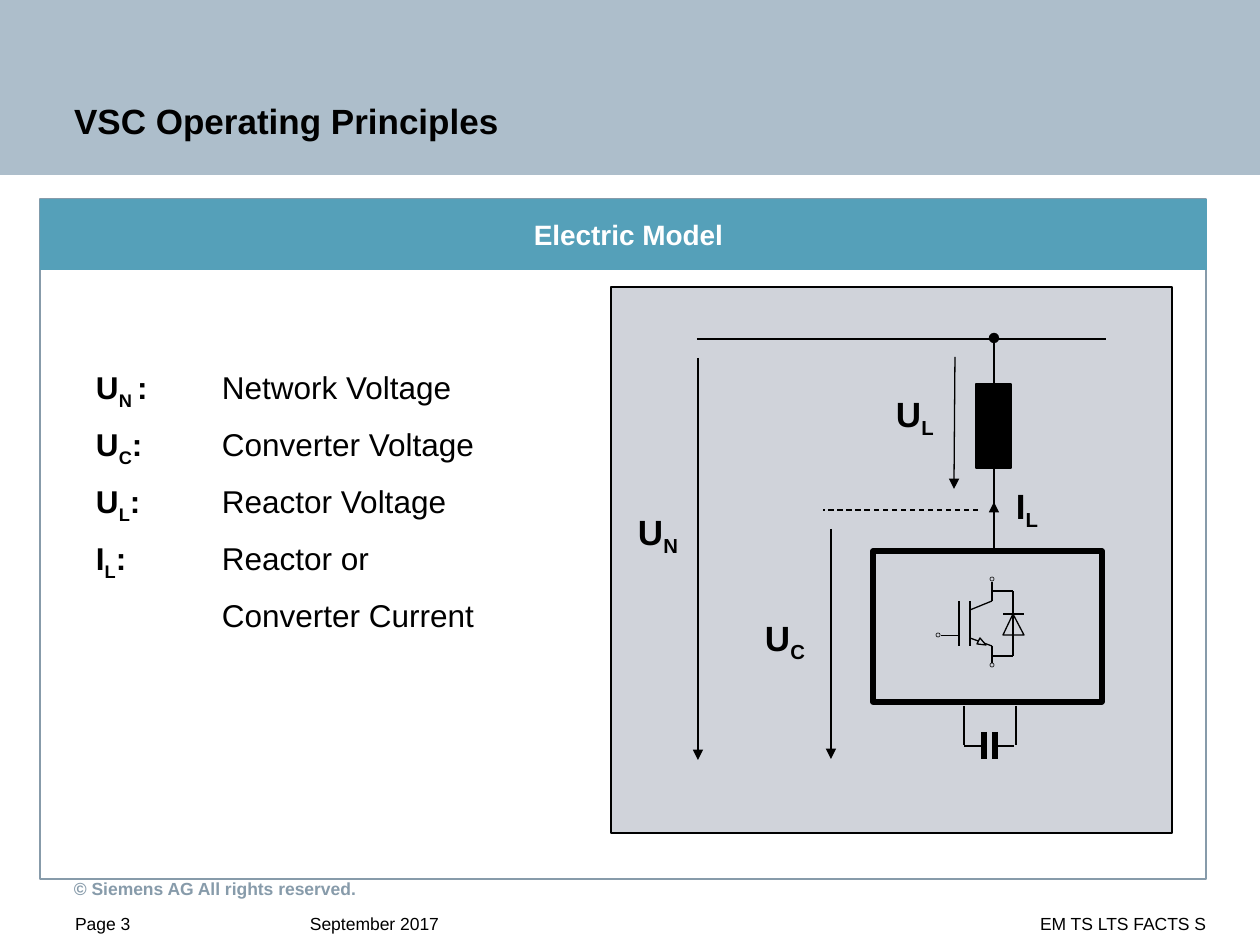
from lxml import etree
from pptx import Presentation, util as u
from pptx.dml.color import RGBColor
from pptx.enum import dml, shapes, text
from pptx.oxml.ns import qn

SCALE = 914400 / 126  # EMU per px
FONT = "Arial"
COLORS = {
    "banner": "ADBECB", "accent": "55A0B9", "muted": "879BAA",
    "diagram": "D0D3DA", "black": "000000", "white": "FFFFFF",
}
HAIR, THIN, THICK = 0.38, 0.75, 3


def px(length):
    return u.Emu(round(length * SCALE))


def rgb(name):
    return RGBColor.from_string(COLORS[name])


def paint(shape, fill, line=None, width=THIN):
    shape.shadow.inherit = False
    shape.fill.solid()
    shape.fill.fore_color.rgb = rgb(fill)
    if line:
        shape.line.color.rgb = rgb(line)
        shape.line.width = u.Pt(width)
    else:
        shape.line.fill.background()


def add_box(parent, box, fill, line=None, width=THIN, kind=shapes.MSO_SHAPE.RECTANGLE):
    shape = parent.add_shape(kind, *map(px, box))
    paint(shape, fill, line, width)
    return shape


def add_line(parent, ends, width=THIN, tail=None, dashed=False):
    line = parent.add_connector(shapes.MSO_CONNECTOR.STRAIGHT, *map(px, ends))
    line.line.color.rgb = rgb("black")
    line.line.width = u.Pt(width)
    if dashed:
        line.line.dash_style = dml.MSO_LINE.DASH
    properties = line.element.spPr
    if tail:
        outline = properties.find(qn("a:ln"))
        etree.SubElement(outline, qn("a:tailEnd")).set("type", tail)
    etree.SubElement(properties, qn("a:effectLst"))


def add_triangle(parent, points, outlined=True):
    builder = parent.build_freeform(*points[0], scale=SCALE)
    builder.add_line_segments(points[1:], close=True)
    paint(builder.convert_to_shape(), "diagram", "black" if outlined else None)


def set_frame(shape, insets, anchor=text.MSO_ANCHOR.TOP, wrap=True):
    frame = shape.text_frame
    frame.word_wrap = wrap
    frame.auto_size = text.MSO_AUTO_SIZE.NONE
    frame.vertical_anchor = anchor
    (frame.margin_left, frame.margin_top,
     frame.margin_right, frame.margin_bottom) = map(px, insets)
    return frame


def add_run(paragraph, words, size, color="black", bold=False, subscript=False):
    run = paragraph.add_run()
    run.text = words
    run.font.name = FONT
    run.font.size = u.Pt(size)
    run.font.bold = bold
    run.font.color.rgb = rgb(color)
    if subscript:
        run.font._element.set("baseline", "-25000")


def write(frame, words, size, color="black", bold=False, align=text.PP_ALIGN.LEFT):
    paragraph = frame.paragraphs[0]
    paragraph.alignment = align
    add_run(paragraph, words, size, color, bold)


def add_symbol(paragraph, letter, index, size):
    add_run(paragraph, letter, size, bold=True)
    add_run(paragraph, index, size, bold=True, subscript=True)


def add_footer(slide):
    notice = slide.shapes.add_textbox(*map(px, (0, 849, 1260, 59)))
    write(set_frame(notice, (74, 20, 292, 0), text.MSO_ANCHOR.MIDDLE),
          "© Siemens AG All rights reserved.", 10, "muted", True)
    for left, width, words, align in (
        (62, 184, "Page 3", text.PP_ALIGN.LEFT),
        (297, 166, "September 2017", text.PP_ALIGN.LEFT),
        (476, 743, "EM TS LTS FACTS S", text.PP_ALIGN.RIGHT),
    ):
        box = slide.shapes.add_textbox(*map(px, (left, 907, width, 34)))
        write(set_frame(box, (13, 6, 13, 6)), words, 10, align=align)


def add_title(slide):
    title = slide.shapes.title
    title.left, title.top, title.width, title.height = map(px, (0, 0, 1260, 175))
    write(set_frame(title, (74, 54, 292, 33), text.MSO_ANCHOR.BOTTOM),
          "VSC Operating Principles", 20, bold=True)
    # Bring the title in front of the banner
    title.element.getparent().append(title.element)


def add_legend(slide):
    box = slide.shapes.add_textbox(*map(px, (96, 368, 510, 304)))
    frame = set_frame(box, (0, 0, 0, 0))
    entries = (
        ("U", "N ", "Network Voltage"), ("U", "C", "Converter Voltage"),
        ("U", "L", "Reactor Voltage"), ("I", "L", "Reactor or"),
        (None, None, "Converter Current"),
    )
    for number, (letter, index, meaning) in enumerate(entries):
        paragraph = frame.paragraphs[0] if number == 0 else frame.add_paragraph()
        paragraph.space_after = u.Pt(8)
        # Meanings hang on a common indent
        properties = paragraph._p.get_or_add_pPr()
        properties.set("marL", str(px(126)))
        properties.set("indent", str(-px(126) if letter else 0))
        if letter:
            add_symbol(paragraph, letter, index, 18)
            add_run(paragraph, ":\t", 18, bold=True)
        add_run(paragraph, meaning, 18)


def add_circuit(group):
    add_box(group, (611, 287, 561, 546), "diagram", "black")
    for letter, index, left, top in (
        ("U", "N", 638, 510), ("U", "L", 896, 392),
        ("U", "C", 765, 616), ("I", "L", 1016, 484),
    ):
        label = add_box(group, (left, top, 43, 42), "diagram")
        paragraph = set_frame(label, (0, 0, 0, 0), wrap=False).paragraphs[0]
        paragraph.alignment = text.PP_ALIGN.LEFT
        add_symbol(paragraph, letter, index, 20)

    # Bus, reactor and converter
    add_line(group, (697, 339, 1106, 339))
    add_line(group, (994, 505, 994, 338), tail="oval")
    add_box(group, (976, 384, 35, 84), "black", "black")
    add_box(group, (873, 551, 229, 151), "diagram", "black", THICK)

    # Capacitor
    for x in (984, 995):
        add_line(group, (x, 732, x, 759), THICK)
    for lead in ((1016, 706, 1016, 745), (964, 706, 964, 745),
                 (964, 746, 982, 746), (998, 746, 1014, 746)):
        add_line(group, lead)

    # Voltage and current arrows
    for arrow in ((698, 358, 698, 760), (955, 357, 954, 489),
                  (831, 529, 831, 759), (994, 549, 994, 502)):
        add_line(group, arrow, tail="triangle")
    add_line(group, (978, 510, 823, 510), dashed=True)


def add_transistor(group):
    add_box(group, (932, 575, 97, 97), "diagram")
    add_triangle(group, ((1024, 635), (1003, 635), (1013, 614)))
    for ends in (
        # Diode branch
        (992, 591, 1013, 591), (992, 656, 1013, 656), (1024, 614, 1003, 614),
        (1013, 602, 1013, 645), (1013, 656, 1013, 645), (1013, 602, 1013, 591),
        # Gate, collector and emitter
        (959, 646, 959, 601), (970, 601, 970, 646),
        (992, 601, 970, 610), (992, 591, 992, 601), (992, 591, 992, 582),
        (970, 638, 992, 646), (992, 646, 992, 656), (992, 656, 992, 663),
    ):
        add_line(group, ends)
    for outlined in (False, True):
        add_triangle(group, ((980, 638), (986, 645), (977, 644)), outlined)
    # Terminals
    for start, end in ((954, 959), (954, 941)):
        add_line(group, (start, 635, end, 635), HAIR)
    for left, top in ((990, 577), (990, 663), (936, 633)):
        add_box(group, (left, top, 4, 4), "diagram", "black", HAIR,
                shapes.MSO_SHAPE.OVAL)


def main():
    presentation = Presentation()
    presentation.slide_width, presentation.slide_height = px(1260), px(945)
    slide = presentation.slides.add_slide(presentation.slide_layouts[5])

    add_box(slide.shapes, (0, 0, 1260, 175), "banner")
    add_footer(slide)
    add_box(slide.shapes, (40, 199, 1166, 680), "white", "muted")
    heading = add_box(slide.shapes, (40, 199, 1167, 71), "accent")
    write(set_frame(heading, (15, 5, 5, 5), text.MSO_ANCHOR.MIDDLE),
          "Electric Model", 16, "white", True, text.PP_ALIGN.CENTER)
    add_title(slide)
    add_legend(slide)

    diagram = slide.shapes.add_group_shape().shapes
    add_circuit(diagram)
    add_transistor(diagram)
    presentation.save("out.pptx")


if __name__ == "__main__":
    main()
